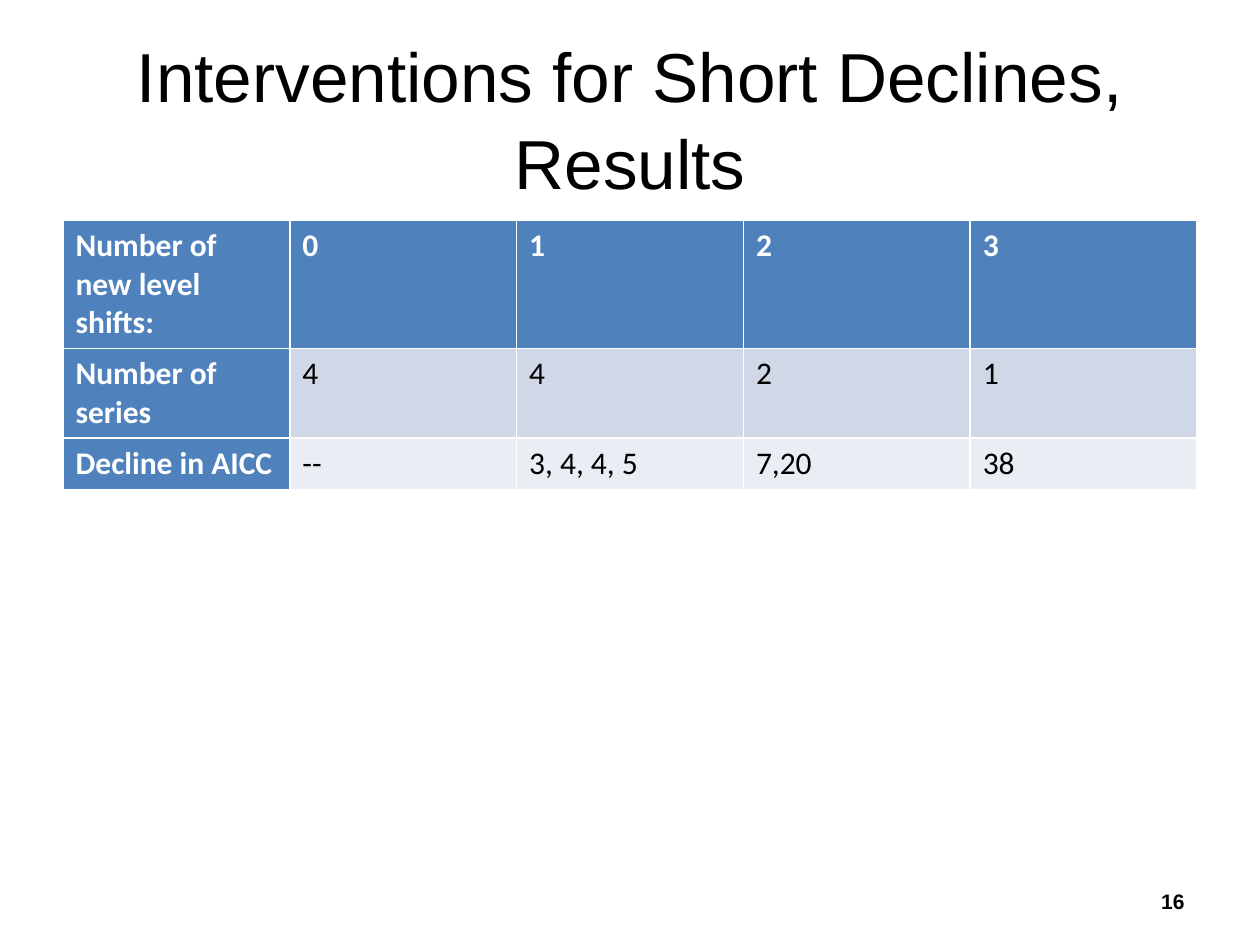
from pptx import Presentation
from pptx.dml.color import RGBColor
from pptx.enum.text import MSO_ANCHOR, MSO_AUTO_SIZE, PP_ALIGN
from pptx.util import Inches, Pt

BLACK = RGBColor(0x00, 0x00, 0x00)
WHITE = RGBColor(0xFF, 0xFF, 0xFF)
BLUE = RGBColor(0x4F, 0x81, 0xBD)
BANDS = [RGBColor(0xD0, 0xD8, 0xE8), RGBColor(0xE9, 0xED, 0xF4)]

ROWS = [
    ["Number of new level shifts:", "0", "1", "2", "3"],
    ["Number of series", "4", "4", "2", "1"],
    ["Decline in AICC", "--", "3, 4, 4, 5", "7,20", "38"],
]


def style(par, name, size, color, bold):
    """Format every run of a paragraph."""
    for run in par.runs:
        font = run.font
        font.name, font.size, font.bold = name, Pt(size), bold
        font.color.rgb = color


def put_title(slide, left, top, width, height):
    """Place and format the slide title."""
    title = slide.shapes.title
    title.left, title.top, title.width, title.height = left, top, width, height
    frame = title.text_frame
    frame.text = "Interventions for Short Declines, Results"
    frame.word_wrap = True
    frame.auto_size = MSO_AUTO_SIZE.NONE
    frame.vertical_anchor = MSO_ANCHOR.MIDDLE
    par = frame.paragraphs[0]
    par.alignment = PP_ALIGN.CENTER
    par.line_spacing = 1.05
    style(par, "Arial", 39.6, BLACK, False)


def put_table(slide, left, top, width, height):
    """Place the results table with a header row and column."""
    table = slide.shapes.add_table(
        len(ROWS), len(ROWS[0]), left, top, width, height).table
    table.first_col = True
    for r, row in enumerate(ROWS):
        for c, text in enumerate(row):
            head = r == 0 or c == 0
            cell = table.cell(r, c)
            cell.text_frame.text = text
            cell.fill.solid()
            cell.fill.fore_color.rgb = BLUE if head else BANDS[r - 1]
            style(cell.text_frame.paragraphs[0], "Calibri", 18,
                  WHITE if head else BLACK, head)


def put_number(slide, left, top, width, height):
    """Place the page number."""
    frame = slide.shapes.add_textbox(left, top, width, height).text_frame
    frame.text = "16"
    frame.word_wrap = True
    frame.vertical_anchor = MSO_ANCHOR.MIDDLE
    par = frame.paragraphs[0]
    par.alignment = PP_ALIGN.RIGHT
    style(par, "Arial", 12, BLACK, True)


def main():
    """Build the slide and save it."""
    deck = Presentation()
    deck.slide_width, deck.slide_height = Inches(10), Inches(7.5)
    slide = deck.slides.add_slide(deck.slide_layouts[5])
    put_title(slide, Inches(0.5), Inches(0.3), Inches(9), Inches(1.25))
    put_table(slide, Inches(0.5), Inches(1.75), Inches(9), Inches(1.23))
    put_number(slide, Inches(7.17), Inches(6.95), Inches(2.33), Inches(0.4))
    deck.save("out.pptx")


if __name__ == "__main__":
    main()
